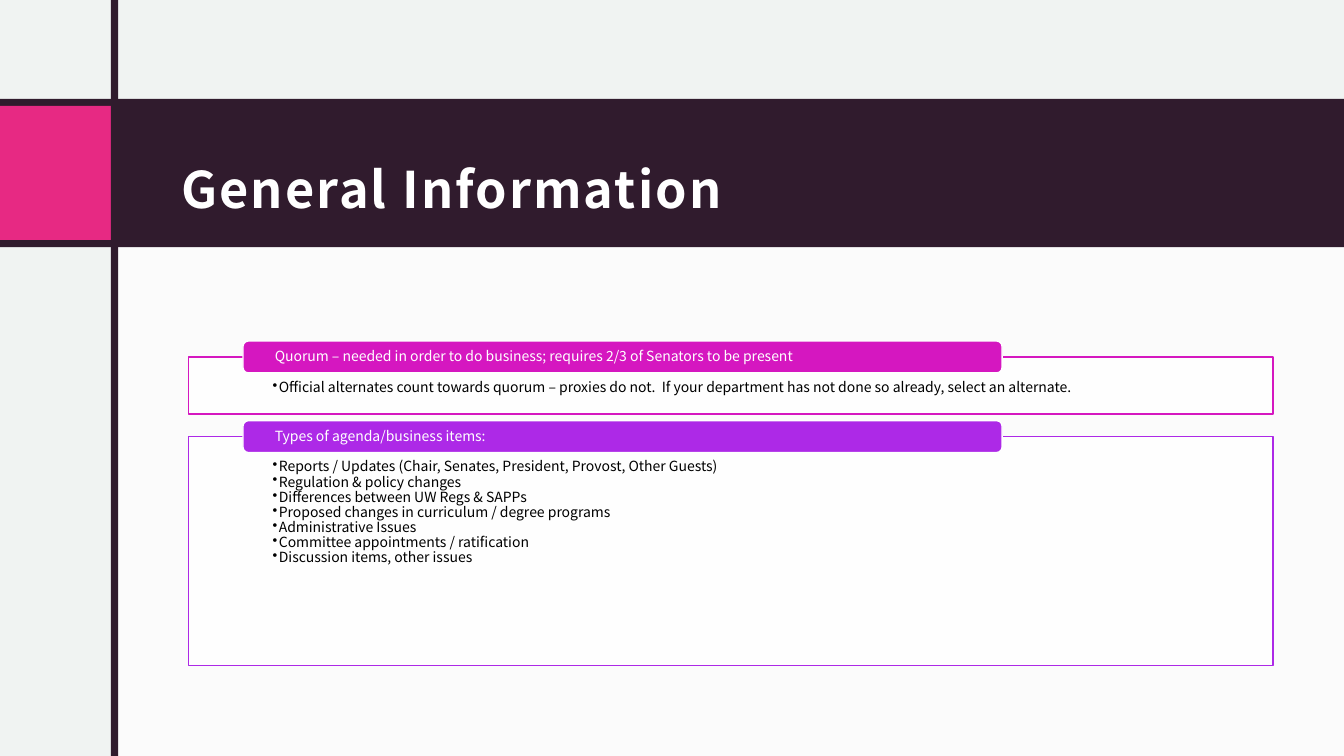
from lxml import etree
from pptx import Presentation
from pptx.dml.color import RGBColor
from pptx.enum.shapes import MSO_SHAPE
from pptx.enum.text import MSO_ANCHOR, MSO_AUTO_SIZE, PP_ALIGN
from pptx.oxml.ns import qn
from pptx.util import Pt

RECT = MSO_SHAPE.RECTANGLE
ROUNDED = MSO_SHAPE.ROUNDED_RECTANGLE
TOP = MSO_ANCHOR.TOP
MIDDLE = MSO_ANCHOR.MIDDLE
LEFT = PP_ALIGN.LEFT
NO_FIT = MSO_AUTO_SIZE.NONE

FONT = "Noto Sans CJK JP"
WHITE, BLACK = "FFFFFF", "000000"
PALE, DARK, PINK = "F0F3F2", "301B2D", "E72983"

BOX_LEFT, BOX_WIDTH = 134.7, 774.6
TAB_LEFT, TAB_WIDTH, TAB_HEIGHT = 173.6, 542.2, 22.8
TAB_RISE = 11.3

# heading, items, colour, top, height
SECTIONS = [
    ("Quorum – needed in order to do business; requires 2/3 of Senators to be present",
     ["Official alternates count towards quorum – proxies do not.  "
      "If your department has not done so already, select an alternate."],
     "D517C0", 254.9, 41),
    ("Types of agenda/business items:",
     ["Reports / Updates (Chair, Senates, President, Provost, Other Guests)",
      "Regulation & policy changes",
      "Differences between UW Regs & SAPPs",
      "Proposed changes in curriculum / degree programs",
      "Administrative Issues",
      "Committee appointments / ratification",
      "Discussion items, other issues"],
     "AD29E7", 311.8, 163.4),
]


def rgb(color):
    return RGBColor.from_string(color)


def add_box(s, kind, left, top, width, height, fill, line=None, opacity=100):
    sp = s.shapes.add_shape(kind, Pt(left), Pt(top), Pt(width), Pt(height))
    sp.shadow.inherit = False
    sp.fill.solid()
    sp.fill.fore_color.rgb = rgb(fill)
    if opacity < 100:
        color = sp.fill._xPr.find(qn("a:solidFill"))[0]
        etree.SubElement(color, qn("a:alpha"), val=str(opacity * 1000))
    if line:
        sp.line.color.rgb = rgb(line)
        sp.line.width = Pt(1)
    else:
        sp.line.fill.background()
    return sp


def set_text(sp, lines, size, color, anchor, insets, spacing, bold=False):
    tf = sp.text_frame
    tf.word_wrap = True
    tf.auto_size = NO_FIT
    tf.vertical_anchor = anchor
    tf.margin_left, tf.margin_top, tf.margin_right, tf.margin_bottom = map(Pt, insets)
    tf.text = "\n".join(lines)
    for p in tf.paragraphs:
        p.alignment = LEFT
        p.line_spacing = spacing
        p.space_before = p.space_after = Pt(0)
        for r in p.runs:
            r.font.name = FONT
            r.font.size = Pt(size)
            r.font.bold = bold
            r.font.color.rgb = rgb(color)
    return tf


def add_bullets(tf, indent):
    for p in tf.paragraphs:
        p.level = 1
        pPr = p._p.get_or_add_pPr()
        pPr.set("marL", str(Pt(indent)))
        pPr.set("indent", str(-Pt(indent)))
        etree.SubElement(pPr, qn("a:buChar"), char="•")


def add_title(s, text):
    title = s.shapes.title
    title.left, title.top, title.width, title.height = Pt(121), Pt(82), Pt(788.4), Pt(81.4)
    tf = set_text(title, [text], 36, WHITE, MIDDLE, (8.6, 8.6, 8.6, 7.2), 1.5, bold=True)
    tf.paragraphs[0].runs[0].font._element.set("spc", "150")
    # Bring the title in front of the band
    title.element.getparent().append(title.element)


def add_section(s, heading, items, color, top, height):
    body = add_box(s, RECT, BOX_LEFT, top, BOX_WIDTH, height, WHITE, color, opacity=90)
    tf = set_text(body, items, 10, BLACK, TOP, (60, 16.6, 60, 5.8), 0.9)
    add_bullets(tf, 4.5)
    tab = add_box(s, ROUNDED, TAB_LEFT, top - TAB_RISE, TAB_WIDTH, TAB_HEIGHT, color, WHITE)
    set_text(tab, [heading], 10, WHITE, MIDDLE, (21.6, 0, 21.6, 0), 0.9)


def main():
    prs = Presentation()
    prs.slide_width, prs.slide_height = Pt(960), Pt(540)
    s = prs.slides.add_slide(prs.slide_layouts[5])

    # Background, title band and stripes
    s.background.fill.solid()
    s.background.fill.fore_color.rgb = rgb(PALE)
    add_box(s, RECT, 82, 168, 878, 372, WHITE, opacity=75)
    add_box(s, RECT, 0, 70.6, 960, 106, DARK)
    add_title(s, "General Information")
    add_box(s, RECT, 0, 75.6, 79.2, 95.8, PINK)
    add_box(s, RECT, 79.2, 0, 5.2, 540, DARK)

    # Headed lists
    for section in SECTIONS:
        add_section(s, *section)

    prs.save("out.pptx")


if __name__ == "__main__":
    main()
